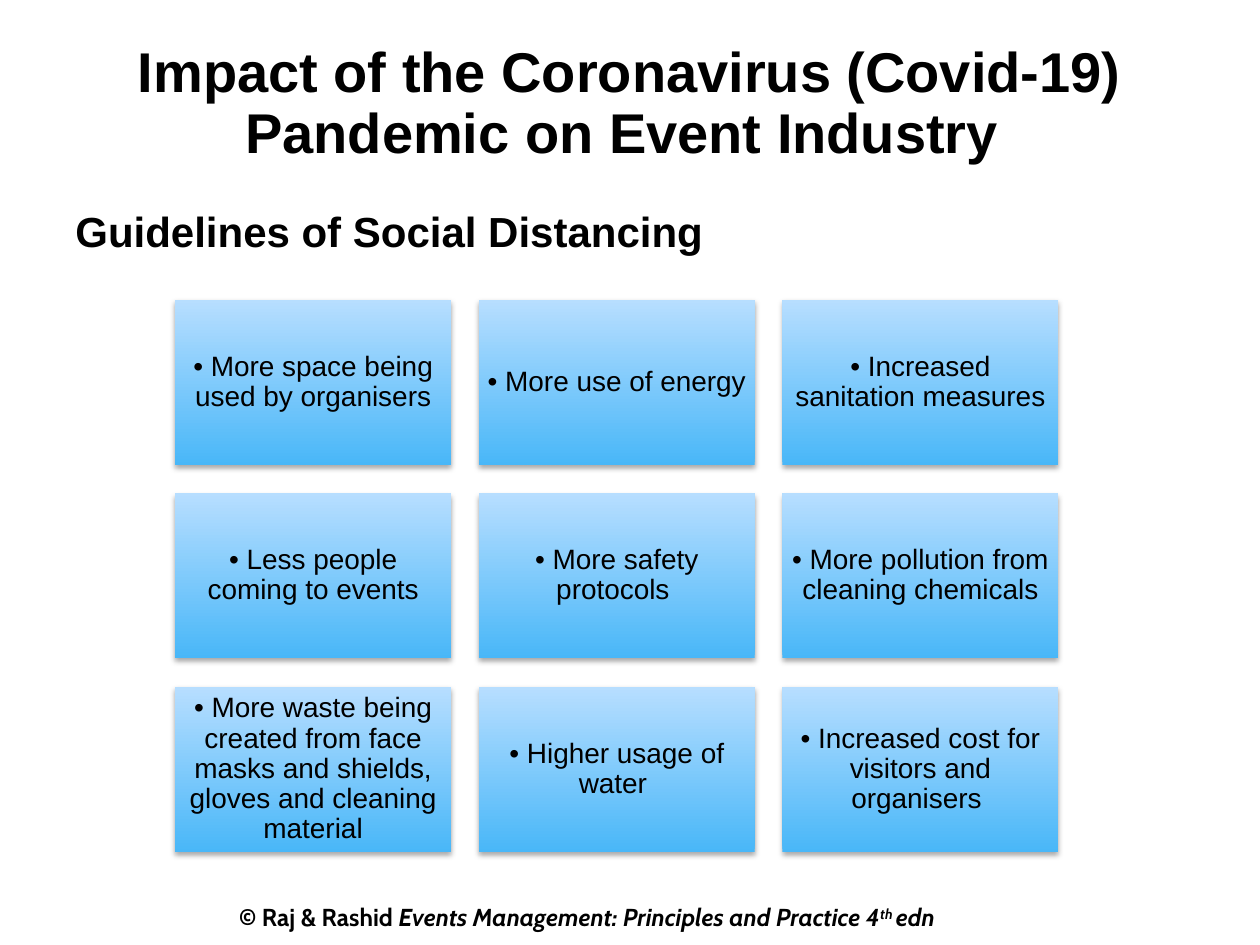
from lxml import etree
from pptx import Presentation
from pptx import util as u
from pptx.dml.color import RGBColor
from pptx.enum import shapes, text
from pptx.oxml.ns import qn

COLOURS = {"text": "000000", "tile_bottom": "49B7F8", "tile_top": "B7DEFF", "shadow": "000000"}

IMPACTS = [
    ["• More space being used by organisers", "• More use of energy ", "• Increased sanitation measures"],
    ["• Less people coming to events", "• More safety protocols ", "• More pollution from cleaning chemicals"],
    [
        "• More waste being created from face masks and shields, gloves and cleaning material",
        "• Higher usage of water ",
        "• Increased cost for visitors and organisers ",
    ],
]


def place(item, box):
    item.left, item.top, item.width, item.height = (u.Inches(length) for length in box)


def write(para, words, size, font="Arial", bold=False, italic=False, raised=False):
    span = para.add_run()
    span.text = words
    span.font.name = font
    span.font.size = u.Pt(size)
    span.font.bold = bold
    span.font.italic = italic
    span.font.color.rgb = RGBColor.from_string(COLOURS["text"])
    if raised:
        span.font._element.set("baseline", "30000")


def set_frame(frame, anchor, insets=(0.1, 0.05, 0.1, 0.05), wrap=True):
    frame.auto_size = text.MSO_AUTO_SIZE.NONE
    frame.word_wrap = wrap
    frame.vertical_anchor = anchor
    frame.margin_left, frame.margin_top, frame.margin_right, frame.margin_bottom = (
        u.Inches(inset) for inset in insets
    )
    return frame.paragraphs[0]


def add_title(page, box):
    place(page.shapes.title, box)
    para = set_frame(page.shapes.title.text_frame, text.MSO_ANCHOR.TOP)
    para.alignment = text.PP_ALIGN.CENTER
    para.line_spacing = 0.9
    write(para, "Impact of the Coronavirus (Covid-19) Pandemic on Event Industry ", 32, bold=True)


def add_heading(page, box):
    heading = page.shapes.add_textbox(*(u.Inches(length) for length in box))
    para = set_frame(heading.text_frame, text.MSO_ANCHOR.BOTTOM, (0.1, 0, 0.1, 0.35))
    write(para, "Guidelines of Social Distancing", 24, bold=True)


def add_shadow(tile):
    tile.shadow.inherit = False
    effects = tile._element.spPr.find(qn("a:effectLst"))
    shadow = etree.SubElement(
        effects, qn("a:outerShdw"), blurRad=str(u.Pt(3.1)), dist=str(u.Pt(1.8)), dir="5400000", rotWithShape="0"
    )
    colour = etree.SubElement(shadow, qn("a:srgbClr"), val=COLOURS["shadow"])
    etree.SubElement(colour, qn("a:alpha"), val="35000")


def add_tile(page, box, words):
    tile = page.shapes.add_shape(shapes.MSO_SHAPE.RECTANGLE, *(u.Inches(length) for length in box))
    tile.fill.gradient()
    tile.fill.gradient_angle = 90
    for stop, name in zip(tile.fill.gradient_stops, ("tile_bottom", "tile_top")):
        stop.color.rgb = RGBColor.from_string(COLOURS[name])
    tile.line.fill.background()
    add_shadow(tile)
    para = set_frame(tile.text_frame, text.MSO_ANCHOR.MIDDLE, (0.07,) * 4)
    para.alignment = text.PP_ALIGN.CENTER
    para.line_spacing = 0.9
    write(para, words, 16)


def add_impact_grid(page, box, tile_width=2.19, tile_height=1.31):
    left, top, width, height = box
    step_across = (width - tile_width) / (len(IMPACTS[0]) - 1)
    step_down = (height - tile_height) / (len(IMPACTS) - 1)
    for row, entries in enumerate(IMPACTS):
        for column, words in enumerate(entries):
            tile_box = (left + column * step_across, top + row * step_down, tile_width, tile_height)
            add_tile(page, tile_box, words)


def add_credit(page, box):
    credit = page.shapes.add_textbox(*(u.Inches(length) for length in box))
    para = set_frame(credit.text_frame, text.MSO_ANCHOR.TOP, wrap=False)
    style = {"size": 14, "font": "Cabin", "bold": True}
    write(para, "© Raj & Rashid ", **style)
    write(para, "Events Management: Principles and Practice 4", italic=True, **style)
    write(para, "th ", italic=True, raised=True, **style)
    write(para, "edn", italic=True, **style)


def main():
    deck = Presentation()
    deck.slide_width, deck.slide_height = u.Inches(10), u.Inches(7.5)
    page = deck.slides.add_slide(deck.slide_layouts[5])
    add_credit(page, (1.8, 7.11, 5.73, 0.34))
    add_title(page, (0.5, 0.3, 9, 1.25))
    add_heading(page, (0.5, 1.65, 5.81, 0.73))
    add_impact_grid(page, (1.39, 2.38, 7.01, 4.38))
    deck.save("out.pptx")


if __name__ == "__main__":
    main()
